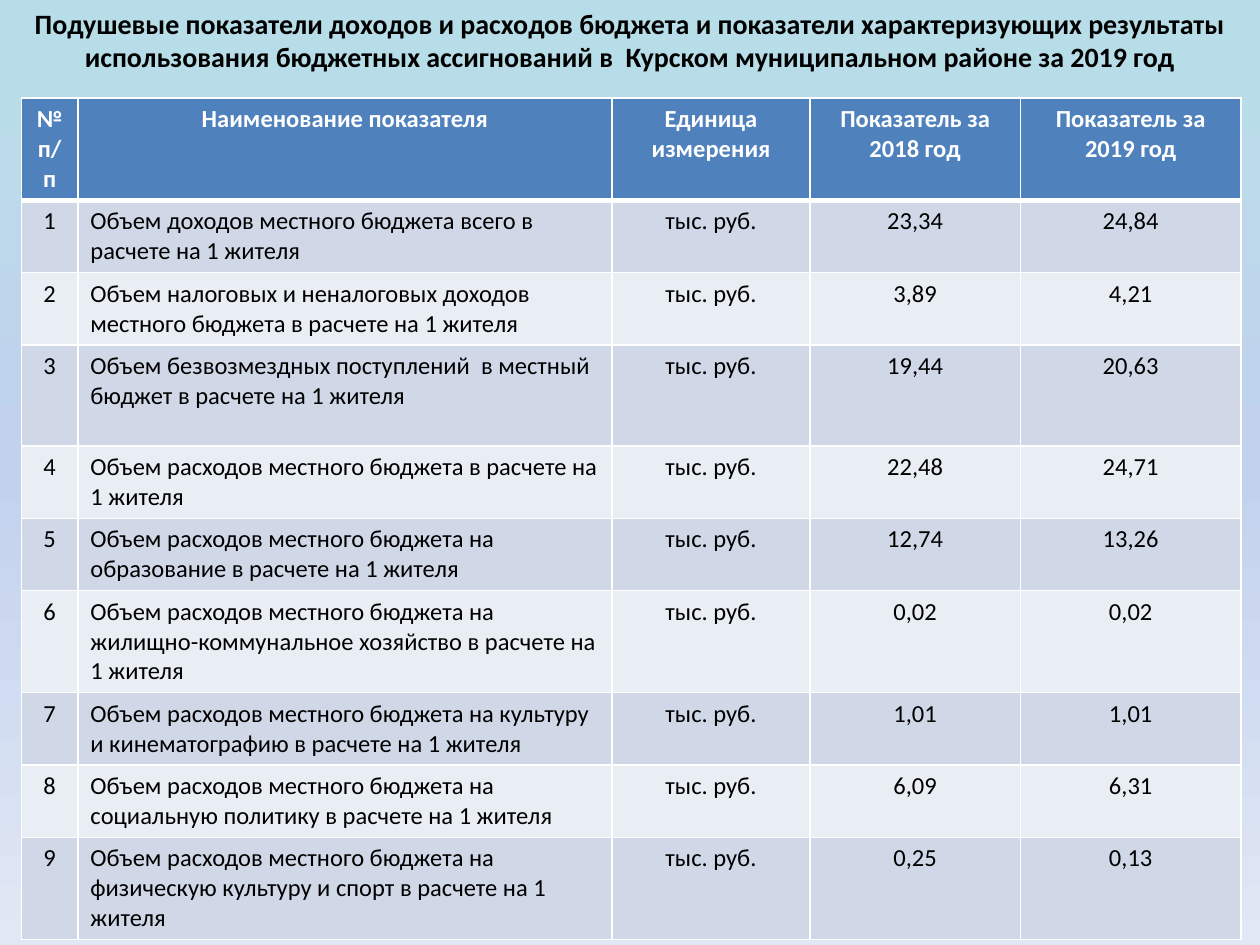
from typing import NamedTuple

from lxml.etree import SubElement
from pptx import Presentation
from pptx.dml.color import RGBColor
from pptx.enum.text import MSO_ANCHOR as Anchor, PP_ALIGN as Align
from pptx.oxml.ns import qn
from pptx.util import Cm, Pt

FONT = "Calibri"
BLACK, WHITE = "000000", "FFFFFF"
HEADER_FILL = "4F81BD"
BAND_FILLS = ("D0D8E8", "E9EDF4")
BACKGROUND_STOPS = ((0, "B7DEE8"), (50, "C2D1ED"), (100, "E1E8F5"))
COLUMN_WIDTHS = (1.14, 10.77, 3.99, 4.24, 4.45)
HEADER_HEIGHT = 2.03
LINE_HEIGHTS = {2: 1.45, 3: 2.04}
UNIT = "тыс. руб."

TITLE = (
    "Подушевые показатели доходов и расходов бюджета и показатели характеризующих "
    "результаты использования бюджетных ассигнований в  Курском муниципальном районе за 2019 год"
)
HEADERS = (
    "№ п/п",
    "Наименование показателя",
    "Единица измерения",
    "Показатель за 2018 год",
    "Показатель за 2019 год",
)


class Indicator(NamedTuple):
    name: str
    value_2018: str
    value_2019: str
    lines: int = 2


INDICATORS = (
    Indicator("Объем доходов местного бюджета всего в расчете на 1 жителя", "23,34", "24,84"),
    Indicator("Объем налоговых и неналоговых доходов местного бюджета в расчете на 1 жителя",
              "3,89", "4,21"),
    Indicator("Объем безвозмездных поступлений  в местный бюджет в расчете на 1 жителя",
              "19,44", "20,63", lines=3),
    Indicator("Объем расходов местного бюджета в расчете на 1 жителя", "22,48", "24,71"),
    Indicator("Объем расходов местного бюджета на образование в расчете на 1 жителя",
              "12,74", "13,26"),
    Indicator("Объем расходов местного бюджета на жилищно-коммунальное хозяйство "
              "в расчете на 1 жителя", "0,02", "0,02", lines=3),
    Indicator("Объем расходов местного бюджета на культуру и кинематографию "
              "в расчете на 1 жителя", "1,01", "1,01"),
    Indicator("Объем расходов местного бюджета на социальную политику в расчете на 1 жителя",
              "6,09", "6,31"),
    Indicator("Объем расходов местного бюджета на физическую культуру и спорт "
              "в расчете на 1 жителя", "0,25", "0,13", lines=3),
)


def rgb(color: str) -> RGBColor:
    return RGBColor.from_string(color)


def write_text(frame, text: str, *, size: float = 14, color: str = BLACK,
               bold: bool = False, align: Align = Align.CENTER) -> None:
    paragraph = frame.paragraphs[0]
    paragraph.alignment = align
    run = paragraph.add_run()
    run.text = text
    run.font.name = FONT
    run.font.size = Pt(size)
    run.font.bold = bold
    run.font.color.rgb = rgb(color)


def paint_background(slide) -> None:
    """Fill the slide with a top-to-bottom gradient of three stops."""
    slide.background.fill.gradient()
    gradient = slide.element.find(".//" + qn("a:gradFill"))
    stops = gradient.find(qn("a:gsLst"))
    for stop in list(stops):
        stops.remove(stop)
    for position, color in BACKGROUND_STOPS:
        stop = SubElement(stops, qn("a:gs"), pos=str(position * 1000))
        SubElement(stop, qn("a:srgbClr"), val=color)
    gradient.find(qn("a:lin")).set("ang", "5400000")


def set_borders(cell, top: float = 1, bottom: float = 1) -> None:
    properties = cell._tc.get_or_add_tcPr()
    for side, width in (("L", 1), ("R", 1), ("T", top), ("B", bottom)):
        line = SubElement(properties, qn("a:ln" + side), w=str(Pt(width)))
        fill = SubElement(line, qn("a:solidFill"))
        SubElement(fill, qn("a:srgbClr"), val=WHITE)


def fill_cell(cell, color: str) -> None:
    cell.fill.solid()
    cell.fill.fore_color.rgb = rgb(color)


def add_indicator_table(slide) -> None:
    heights = [HEADER_HEIGHT] + [LINE_HEIGHTS[item.lines] for item in INDICATORS]
    frame = slide.shapes.add_table(
        len(heights), len(HEADERS), Cm(0.43), Cm(1.98),
        Cm(sum(COLUMN_WIDTHS)), Cm(sum(heights)),
    )
    table = frame.table
    table.horz_banding = False
    for column, width in zip(table.columns, COLUMN_WIDTHS):
        column.width = Cm(width)
    for row, height in zip(table.rows, heights):
        row.height = Cm(height)

    for cell, text in zip(table.rows[0].cells, HEADERS):
        set_borders(cell, bottom=3)
        fill_cell(cell, HEADER_FILL)
        write_text(cell.text_frame, text, color=WHITE, bold=True)

    for number, item in enumerate(INDICATORS, start=1):
        texts = (str(number), item.name, UNIT, item.value_2018, item.value_2019)
        for column, text in enumerate(texts):
            cell = table.cell(number, column)
            set_borders(cell, top=3 if number == 1 else 1)
            fill_cell(cell, BAND_FILLS[(number - 1) % 2])
            write_text(cell.text_frame, text, align=Align.LEFT if column == 1 else Align.CENTER)


def add_title(slide) -> None:
    title = slide.shapes.title
    title.left, title.top, title.width, title.height = Cm(0), Cm(0), Cm(25.4), Cm(1.63)
    title.text_frame.word_wrap = True
    title.text_frame.vertical_anchor = Anchor.TOP
    write_text(title.text_frame, TITLE, size=16, bold=True)


def main() -> None:
    presentation = Presentation()
    presentation.slide_width, presentation.slide_height = Cm(25.4), Cm(19.05)
    slide = presentation.slides.add_slide(presentation.slide_layouts[5])
    paint_background(slide)
    add_title(slide)
    add_indicator_table(slide)
    presentation.save("out.pptx")


if __name__ == "__main__":
    main()
